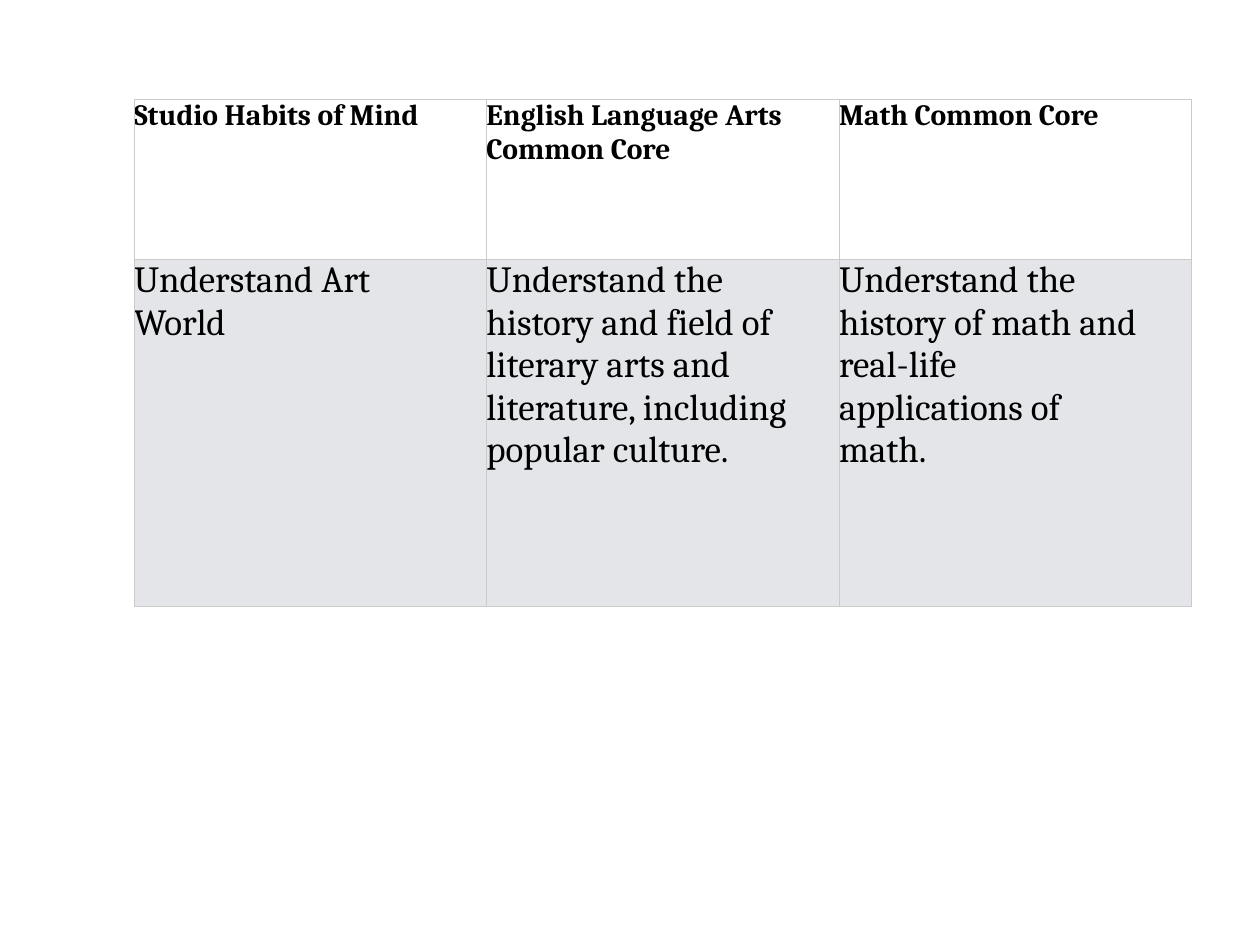
from lxml.etree import SubElement
from pptx import Presentation
from pptx.dml.color import RGBColor
from pptx.oxml.ns import qn
from pptx.util import Inches, Pt

ROWS = [
    {
        "height": 1.81, "size": 24, "bold": True, "fill": "FFFFFF",
        "texts": ["Studio Habits of Mind", "English Language Arts Common Core", "Math Common Core"],
    },
    {
        "height": 3.92, "size": 30, "bold": False, "fill": "E3E5E8",
        "texts": [
            "Understand Art World",
            "Understand the history and field of literary arts and literature, including popular culture.",
            "Understand the history of math and real-life applications of math.",
        ],
    },
]
LEFT, TOP, COLUMN_WIDTH = 1.51, 1.12, 3.977
COLUMN_WIDTH = round(COLUMN_WIDTH, 2)
RIGHT_MARGIN = 0.54
BORDER = "CBCBCB"


def color(value):
    return RGBColor.from_string(value)


def write(cell, text, size, bold, font="Cambria", ink="000000"):
    cell.margin_left = cell.margin_top = cell.margin_bottom = 0
    cell.margin_right = Inches(RIGHT_MARGIN)
    span = cell.text_frame.paragraphs[0].add_run()
    span.text = text
    span.font.name = font
    span.font.size = Pt(size)
    span.font.bold = bold
    span.font.color.rgb = color(ink)


def outline(cell, value, width=0.5):
    properties = cell._tc.get_or_add_tcPr()
    for side in ("a:lnL", "a:lnR", "a:lnT", "a:lnB"):
        line = SubElement(properties, qn(side), w=str(Pt(width)))
        solid = SubElement(line, qn("a:solidFill"))
        SubElement(solid, qn("a:srgbClr"), val=value)


def main():
    deck = Presentation()
    deck.slide_width, deck.slide_height = Inches(14.22), Inches(10.67)
    page = deck.slides.add_slide(deck.slide_layouts[6])
    columns = len(ROWS[0]["texts"])
    height = sum(row["height"] for row in ROWS)
    table = page.shapes.add_table(
        len(ROWS), columns, Inches(LEFT), Inches(TOP),
        Inches(COLUMN_WIDTH * columns), Inches(height),
    ).table
    for row_index, row in enumerate(ROWS):
        table.rows[row_index].height = Inches(row["height"])
        for column_index, text in enumerate(row["texts"]):
            cell = table.cell(row_index, column_index)
            write(cell, text, size=row["size"], bold=row["bold"])
            outline(cell, BORDER)
            cell.fill.solid()
            cell.fill.fore_color.rgb = color(row["fill"])
    deck.save("out.pptx")


if __name__ == "__main__":
    main()
